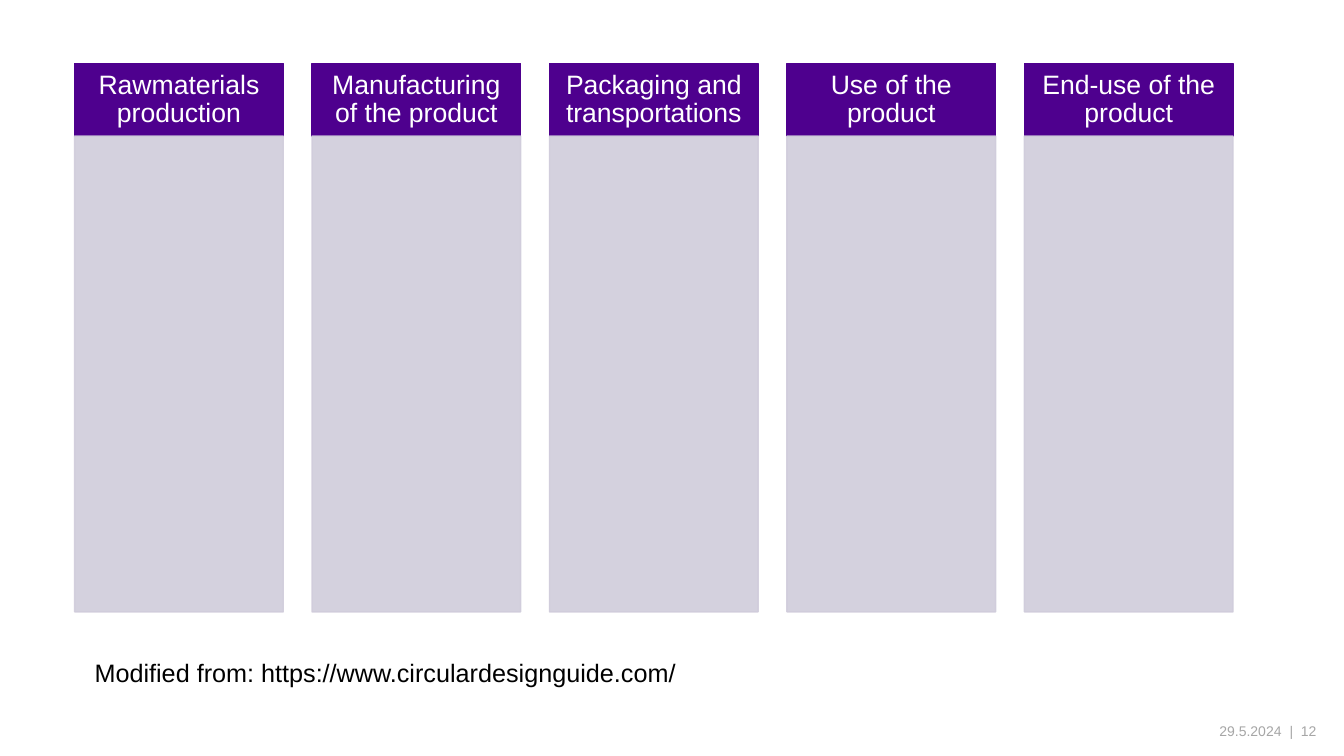
from lxml import etree
from pptx import Presentation
from pptx import util as u
from pptx.dml.color import RGBColor
from pptx.enum import shapes, text
from pptx.oxml import ns

PURPLE, LILAC, WHITE, GREY, BLACK = "4E008E", "D0CCDB", "FFFFFF", "A6A6A6", "000000"
ALIGN, ANCHOR = text.PP_ALIGN, text.MSO_ANCHOR


def color(code):
    return RGBColor.from_string(code)


class Board:
    """Holds the text style and the current slide."""

    font = {"name": "Arial", "bold": False}

    def __init__(self, slide):
        self.slide = slide

    def letter(self, frame, words, size, tint, pad, anchor, **para):
        sides = ("margin_left", "margin_top", "margin_right", "margin_bottom")
        look = dict(zip(sides, map(u.Inches, pad)))
        look.update(word_wrap=True, vertical_anchor=anchor)
        line = frame.paragraphs[0]
        line.text = words
        font = dict(self.font, size=u.Pt(size))
        for part, values in ((frame, look), (line, para), (line.font, font)):
            for key, value in values.items():
                setattr(part, key, value)
        line.font.color.rgb = color(tint)

    def block(self, spot, tint, alpha=100):
        rect = self.slide.shapes.add_shape(
            shapes.MSO_SHAPE.RECTANGLE, *map(u.Inches, spot))
        rect.shadow.inherit = False
        rect.line.width = u.Pt(1)
        for fill in (rect.fill, rect.line.fill):
            fill.solid()
            fill.fore_color.rgb = color(tint)
        if alpha < 100:
            for node in rect.element.spPr.iter(ns.qn("a:srgbClr")):
                etree.SubElement(node, ns.qn("a:alpha")).set("val", str(alpha * 1000))
        return rect

    def label(self, spot, words, size, tint, pad, anchor, **para):
        box = self.slide.shapes.add_textbox(*map(u.Inches, spot))
        self.letter(box.text_frame, words, size, tint, pad, anchor, **para)


def main():
    deck = Presentation()
    deck.slide_width, deck.slide_height = u.Inches(13.33), u.Inches(7.5)
    board = Board(deck.slides.add_slide(deck.slide_layouts[6]))

    # Life cycle columns: a heading above an empty field
    stages = ["Rawmaterials production", "Manufacturing of the product",
              "Packaging and transportations", "Use of the product",
              "End-use of the product"]
    left, last, top, width, head, body = 0.74, 10.16, 0.63, 2.07, 0.72, 4.72
    step = (last - left) / (len(stages) - 1)
    for i, stage in enumerate(stages):
        x = left + i * step
        title = board.block((x, top, width, head), PURPLE)
        board.letter(title.text_frame, stage, 19, WHITE, (0.15, 0.08, 0.15, 0.08),
                     ANCHOR.MIDDLE, alignment=ALIGN.CENTER, line_spacing=0.9)
        board.block((x, top + head, width, body), LILAC, 90)

    # Date and page number
    board.label((11.87, 7.1, 0.84, 0.28), "29.5.2024", 10, GREY,
                (0, 0.05, 0, 0.05), ANCHOR.BOTTOM, alignment=ALIGN.RIGHT)
    board.label((12.79, 7.1, 0.41, 0.28), "|  12", 10, GREY,
                (0, 0.05, 0.1, 0.05), ANCHOR.BOTTOM)

    # Source line
    board.label((0.84, 6.47, 6.67, 0.4),
                "Modified from: https://www.circulardesignguide.com/", 18, BLACK,
                (0.1, 0.05, 0.1, 0.05), ANCHOR.TOP)

    deck.save("out.pptx")


if __name__ == "__main__":
    main()
